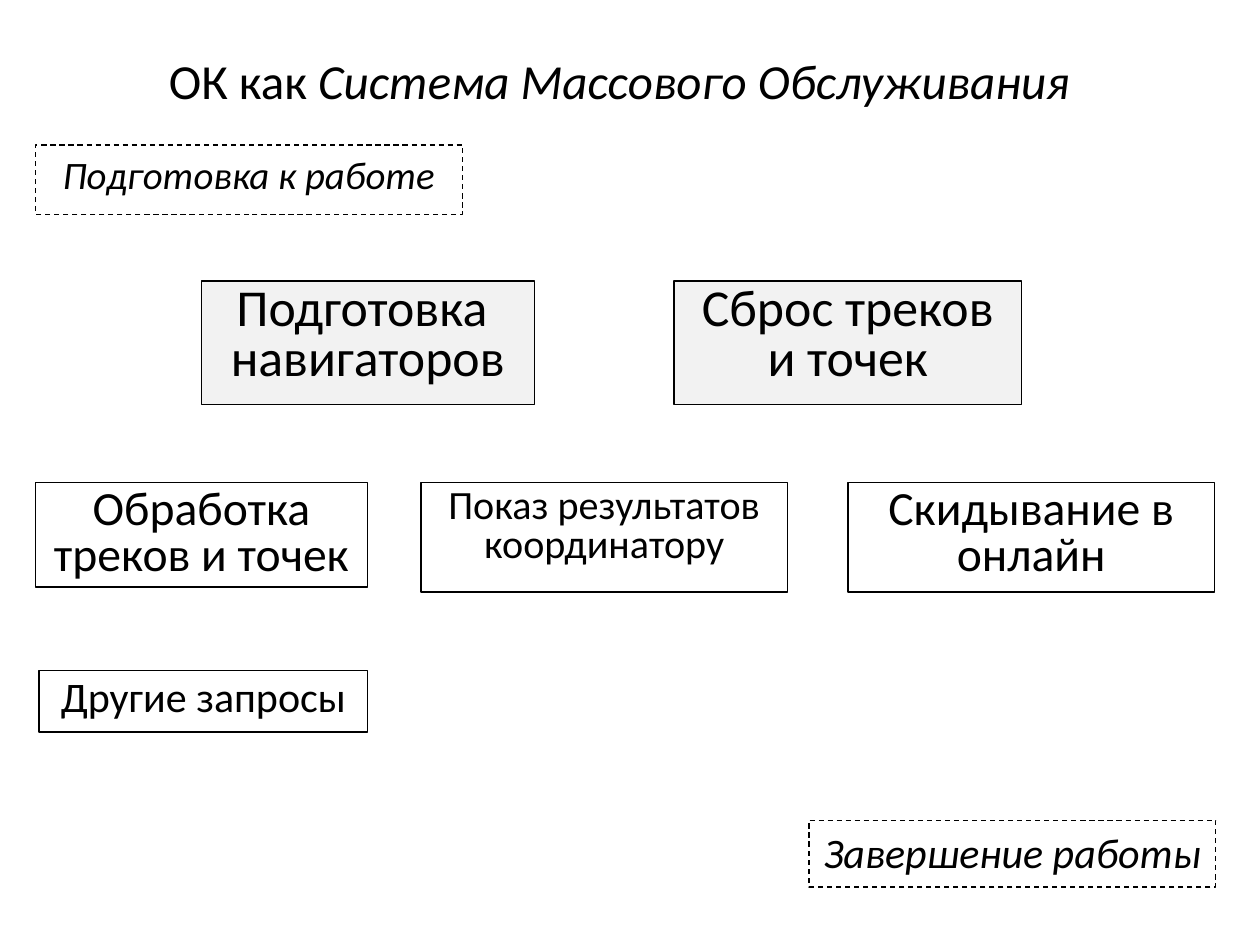
from pptx import Presentation
from pptx.util import Inches, Pt
from pptx.dml.color import RGBColor
from pptx.enum.dml import MSO_LINE
from pptx.enum.shapes import MSO_SHAPE
from pptx.enum.text import MSO_ANCHOR, PP_ALIGN

FONT = "Calibri"
COLORS = {"ink": "000000", "gray": "F2F2F2"}

# Content: title runs as (text, italic)
TITLE = [("ОК как ", False), ("Система Массового Обслуживания", True)]

# Stages that open and close the work: text, (left, top, width, height), size
STAGES = [
    ("Подготовка к работе", (0.28, 1.15, 3.39, 0.55), 22.2),
    ("Завершение работы", (6.42, 6.51, 3.23, 0.53), 24),
]

# Rows of requests: top, fill, line spacing, [(text, left, width, height, size)]
ROWS = [
    (2.23, "gray", 0.8, [
        ("Подготовка \vнавигаторов", 1.6, 2.64, 0.98, 29.6),
        ("Сброс треков и точек", 5.35, 2.76, 0.98, 29.6),
    ]),
    (3.83, None, 0.8, [
        ("Обработка треков и точек", 0.28, 2.64, 0.83, 27.2),
        ("Показ результатов координатору", 3.34, 2.91, 0.87, 22.9),
        ("Скидывание в онлайн", 6.73, 2.91, 0.87, 27.2),
    ]),
    (5.32, None, 0.9, [
        ("Другие запросы", 0.31, 2.61, 0.49, 24),
    ]),
]


def rgb(name):
    return RGBColor.from_string(COLORS[name])


def style_run(r, size, italic=False):
    r.font.name = FONT
    r.font.size = Pt(size)
    r.font.italic = italic
    r.font.color.rgb = rgb("ink")


def add_box(s, text, box, size, fill=None, spacing=None, dashed=False):
    sp = s.shapes.add_shape(MSO_SHAPE.RECTANGLE, *map(Inches, box))
    sp.shadow.inherit = False
    if fill:
        sp.fill.solid()
        sp.fill.fore_color.rgb = rgb(fill)
    else:
        sp.fill.background()
    sp.line.color.rgb = rgb("ink")
    sp.line.width = Pt(0.75)
    if dashed:
        sp.line.dash_style = MSO_LINE.DASH
    tf = sp.text_frame
    tf.word_wrap = True
    tf.vertical_anchor = MSO_ANCHOR.TOP
    p = tf.paragraphs[0]
    p.text = text
    p.alignment = PP_ALIGN.CENTER
    if spacing:
        p.line_spacing = spacing
    for r in p.runs:
        style_run(r, size, italic=dashed)


def main():
    prs = Presentation()
    prs.slide_width, prs.slide_height = Inches(10), Inches(7.5)
    s = prs.slides.add_slide(prs.slide_layouts[6])

    # Title
    tf = s.shapes.add_textbox(*map(Inches, (0.35, 0.29, 9.13, 0.69))).text_frame
    tf.word_wrap = True
    tf.vertical_anchor = MSO_ANCHOR.MIDDLE
    p = tf.paragraphs[0]
    p.alignment = PP_ALIGN.CENTER
    for text, italic in TITLE:
        r = p.add_run()
        r.text = text
        style_run(r, 28, italic)

    # Dashed stages
    for text, box, size in STAGES:
        add_box(s, text, box, size, dashed=True)

    # Request boxes
    for top, fill, spacing, boxes in ROWS:
        for text, left, width, height, size in boxes:
            add_box(s, text, (left, top, width, height), size, fill, spacing)

    prs.save("out.pptx")


if __name__ == "__main__":
    main()
